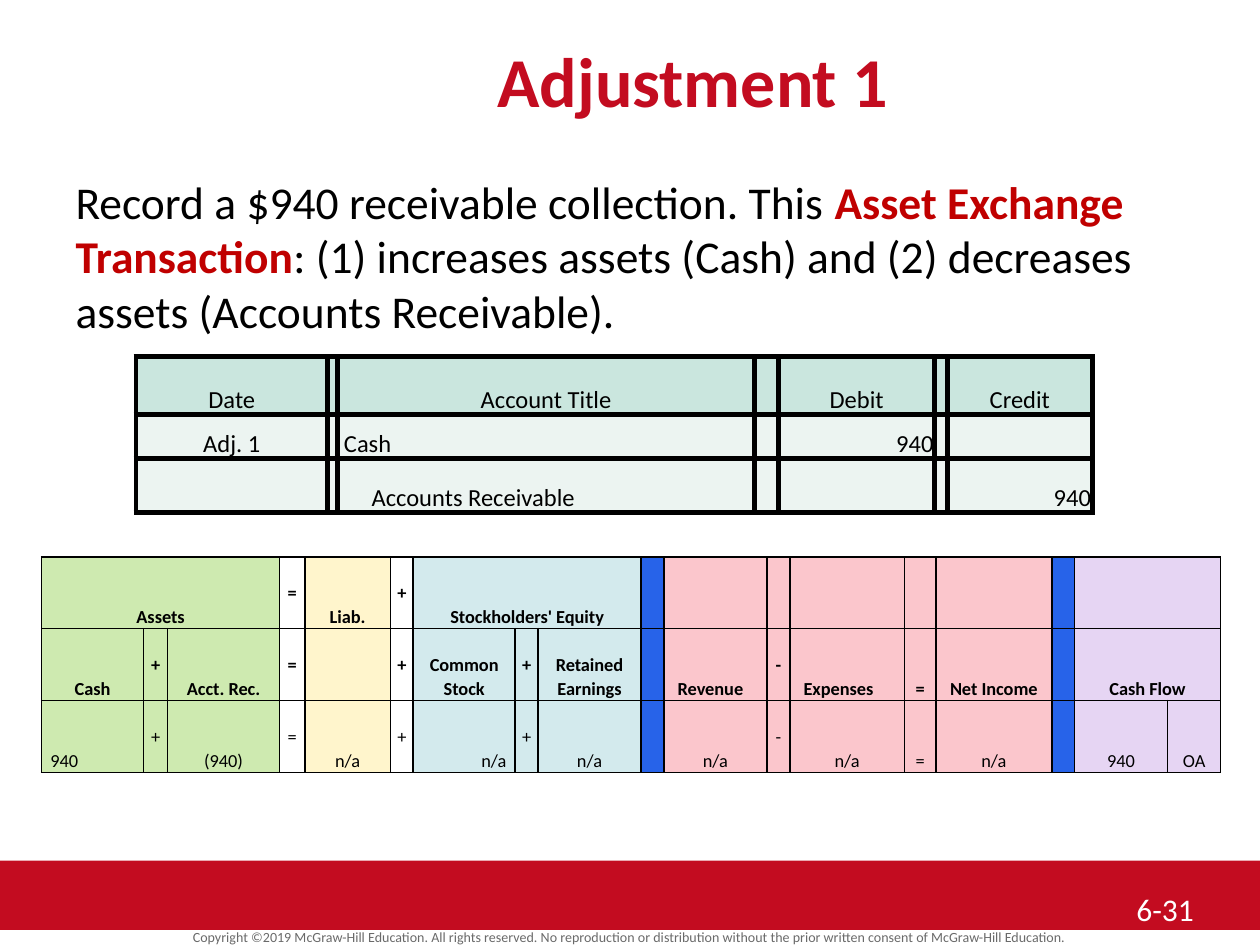
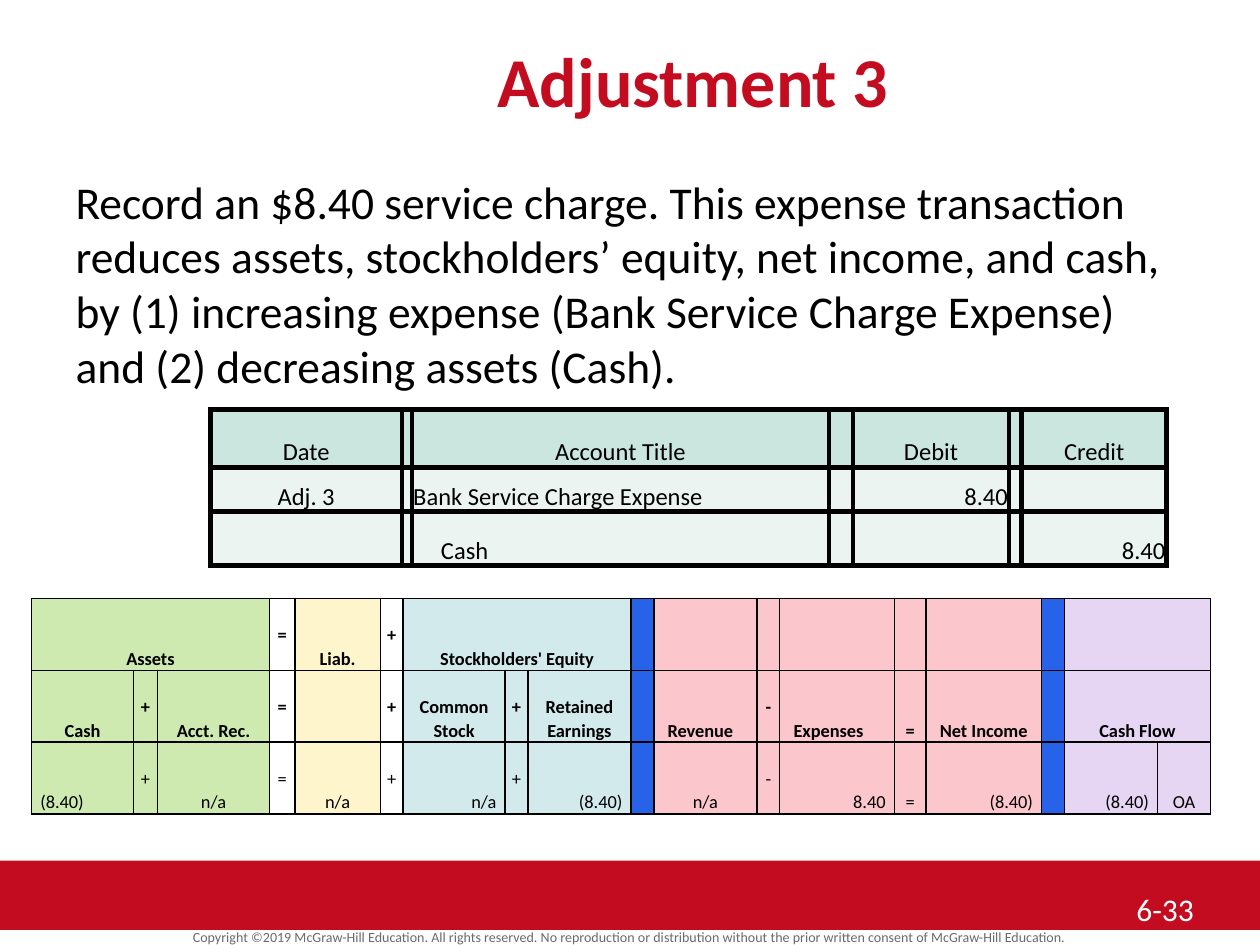
from lxml import etree
from pptx import Presentation
from pptx.dml.color import RGBColor
from pptx.enum import shapes, text
from pptx.oxml import ns
from pptx.util import Inches, Pt

FONT = "Calibri"
COLORS = {
    "crimson": "C30C20", "emphasis": "C00000", "black": "000000",
    "white": "FFFFFF", "gray": "6A6A6A", "mint": "CAE6DE", "pale": "ECF4F1",
    "assets": "CEEAB0", "liabilities": "FFF5CC", "equity": "D3EAED",
    "divider": "2763E9", "income": "FBC6CC", "cash_flow": "E6D5F3",
}
COPYRIGHT = ("Copyright ©2019 McGraw-Hill Education. All rights reserved. "
             "No reproduction or distribution without the prior written "
             "consent of McGraw-Hill Education.")
LEFT, CENTER, RIGHT = (text.PP_ALIGN.LEFT, text.PP_ALIGN.CENTER,
                       text.PP_ALIGN.RIGHT)

JOURNAL_WIDTHS = [1.52, 0.08, 3.31, 0.19, 1.24, 0.1, 1.15]
JOURNAL_HEIGHTS = [0.46, 0.35, 0.43]

EQUATION_WIDTHS = [0.81, 0.19, 0.89, 0.2, 0.68, 0.18, 0.81, 0.18, 0.82,
                   0.18, 0.82, 0.18, 0.91, 0.25, 0.92, 0.18, 0.74, 0.42]
EQUATION_HEIGHTS = [0.57] * 3
EQUATION_FILLS = (["assets"] * 3 + [None, "liabilities", None]
                  + ["equity"] * 3 + ["divider"] + ["income"] * 5
                  + ["divider"] + ["cash_flow"] * 2)
EQUATION_GROUPS = ["Assets", "", "", "=", "Liab.", "+",
                   "Stockholders' Equity"] + [""] * 11
EQUATION_ACCOUNTS = ["Cash", "+", "Acct. Rec.", "=", "", "+", "Common Stock",
                     "+", "Retained Earnings", "", "Revenue", "-", "Expenses",
                     "=", "Net Income", "", "Cash Flow", ""]
EQUATION_MERGES = [(0, 0, 2), (0, 6, 8), (0, 16, 17), (1, 16, 17)]
OPERATOR_WIDTH = 0.2
LINE_HEIGHT = 0.19


def rgb(name):
    return RGBColor.from_string(COLORS[name])


def set_borders(cell, width):
    properties = cell._tc.get_or_add_tcPr()
    for position, side in enumerate(("lnL", "lnR", "lnT", "lnB")):
        line = etree.Element(ns.qn(f"a:{side}"), w=str(Pt(width)))
        fill = etree.SubElement(line, ns.qn("a:solidFill"))
        etree.SubElement(fill, ns.qn("a:srgbClr"), val=COLORS["black"])
        properties.insert(position, line)


class Deck:
    """Holds the shared style and the slide being built."""

    def __init__(self):
        self.prs = Presentation()
        self.prs.slide_width = Inches(10)
        self.prs.slide_height = Inches(7.5)
        self.slide = None

    def style(self, paragraph, size, color="black", bold=False, align=LEFT):
        paragraph.alignment = align
        for run in paragraph.runs:
            run.font.name = FONT
            run.font.size = Pt(size)
            run.font.bold = bold
            run.font.color.rgb = rgb(color)

    def place(self, shape, left, top, width, height):
        shape.left, shape.top = Inches(left), Inches(top)
        shape.width, shape.height = Inches(width), Inches(height)
        frame = shape.text_frame
        frame.auto_size = text.MSO_AUTO_SIZE.NONE
        frame.word_wrap = True
        frame.vertical_anchor = text.MSO_ANCHOR.TOP
        return frame

    def start_slide(self, title, number):
        self.slide = self.prs.slides.add_slide(self.prs.slide_layouts[1])
        self.band()
        self.label(COPYRIGHT, (0, 7.34, 10, 0.19), 8, "gray", CENTER, inset=0)
        frame = self.place(self.slide.shapes.title, 1, 0.25, 9, 0.67)
        frame.text = title
        self.style(frame.paragraphs[0], 40, "crimson", True, CENTER)
        self.label(number, (8.92, 7, 0.92, 0.42), 18, "white")

    def band(self):
        band = self.slide.shapes.add_shape(
            shapes.MSO_SHAPE.RECTANGLE,
            Inches(0), Inches(6.83), Inches(10), Inches(0.55))
        band.shadow.inherit = False
        band.fill.solid()
        band.fill.fore_color.rgb = rgb("crimson")
        band.line.fill.background()

    def label(self, wording, box, size, color, align=LEFT, inset=0.05):
        shape = self.slide.shapes.add_textbox(*map(Inches, box))
        frame = self.place(shape, *box)
        frame.margin_top = frame.margin_bottom = Inches(inset)
        frame.vertical_anchor = text.MSO_ANCHOR.MIDDLE
        frame.text = wording
        self.style(frame.paragraphs[0], size, color, align=align)

    def body(self, *parts):
        """Write one unbulleted paragraph; every second part is emphasised."""
        frame = self.place(self.slide.placeholders[1], 0.5, 1.33, 9, 5.17)
        paragraph = frame.paragraphs[0]
        properties = paragraph._p.get_or_add_pPr()
        properties.set("marL", "0")
        properties.set("indent", "0")
        etree.SubElement(properties, ns.qn("a:buNone"))
        paragraph.space_before = Pt(0)
        for part in parts:
            paragraph.add_run().text = part
        self.style(paragraph, 26)
        for run in paragraph.runs[1::2]:
            run.font.bold = True
            run.font.color.rgb = rgb("emphasis")

    def grid(self, left, top, widths, heights):
        table = self.slide.shapes.add_table(
            len(heights), len(widths), Inches(left), Inches(top),
            Inches(sum(widths)), Inches(sum(heights))).table
        table.first_row = table.horz_banding = False
        for column, width in zip(table.columns, widths):
            column.width = Inches(width)
        for row, height in zip(table.rows, heights):
            row.height = Inches(height)
        return table

    def cell(self, cell, wording, size, fill, border, align=CENTER,
             bold=False, left=0.01, right=0.01, bottom=0):
        cell.margin_left, cell.margin_right = Inches(left), Inches(right)
        cell.margin_top, cell.margin_bottom = Inches(0.01), Inches(bottom)
        cell.vertical_anchor = text.MSO_ANCHOR.BOTTOM
        if fill:
            cell.fill.solid()
            cell.fill.fore_color.rgb = rgb(fill)
        else:
            cell.fill.background()
        set_borders(cell, border)
        if wording:
            cell.text_frame.text = wording
            self.style(cell.text_frame.paragraphs[0], size, bold=bold,
                       align=align)

    def journal(self, left, top, date, debited, credited, amount,
                debit_indent, credit_indent):
        entries = [
            ["Date", "", "Account Title", "", "Debit", "", "Credit"],
            [date, "", debited, "", amount, "", ""],
            ["", "", credited, "", "", "", amount],
        ]
        indents = [0.01, debit_indent, credit_indent]
        table = self.grid(left, top, JOURNAL_WIDTHS, JOURNAL_HEIGHTS)
        for r, entry in enumerate(entries):
            for c, wording in enumerate(entry):
                align = {2: LEFT, 4: RIGHT, 6: RIGHT}.get(c, CENTER)
                self.cell(table.cell(r, c), wording, 14,
                          "pale" if r else "mint", 3,
                          align if r else CENTER,
                          left=indents[r] if c == 2 else 0.01)

    def equation(self, left, top, amounts, right_aligned):
        """Draw the statements model; right_aligned lists amount columns."""
        aligns = [{}, {10: LEFT, 12: LEFT},
                  {0: LEFT, **dict.fromkeys(right_aligned, RIGHT)}]
        table = self.grid(left, top, EQUATION_WIDTHS, EQUATION_HEIGHTS)
        rows = [EQUATION_GROUPS, EQUATION_ACCOUNTS, amounts]
        for r, row in enumerate(rows):
            for c, wording in enumerate(row):
                narrow = EQUATION_WIDTHS[c] <= OPERATOR_WIDTH
                side = 0 if narrow else 0.07
                cell = table.cell(r, c)
                self.cell(cell, wording, 10.5, EQUATION_FILLS[c], 1,
                          aligns[r].get(c, CENTER), bold=r < 2,
                          left=0.11 if r == 1 and c in aligns[1] else side,
                          right=side, bottom=LINE_HEIGHT if narrow else 0)
                cell.text_frame.paragraphs[0].line_spacing = 1.07
        for r, first, last in EQUATION_MERGES:
            table.cell(r, first).merge(table.cell(r, last))


def main():
    deck = Deck()

    deck.start_slide("Adjustment 1", "6-31")
    deck.body("Record a $940 receivable collection. This ",
              "Asset Exchange Transaction",
              ": (1) increases assets (Cash) and (2) decreases assets "
              "(Accounts Receivable).")
    deck.equation(0.33, 4.42,
                  ["940", "+", "(940)", "=", "n/a", "+", "n/a", "+", "n/a",
                   "", "n/a", "-", "n/a", "=", "n/a", "", "940", "OA"],
                  right_aligned=[6])
    deck.journal(1.08, 2.83, "Adj. 1", "Cash", "Accounts Receivable", "940",
                 debit_indent=0.05, credit_indent=0.27)

    deck.start_slide("Adjustment 3", "6-33")
    deck.body("Record an $8.40 service charge. This expense transaction "
              "reduces assets, stockholders’ equity, net income, and cash, "
              "by (1) increasing expense (Bank Service Charge Expense) and "
              "(2) decreasing assets (Cash).")
    deck.equation(0.25, 4.75,
                  ["(8.40)", "+", "n/a", "=", "n/a", "+", "n/a", "+",
                   "(8.40)", "", "n/a", "-", "8.40", "=", "(8.40)", "",
                   "(8.40)", "OA"],
                  right_aligned=[6, 8, 12, 14, 16])
    deck.journal(1.67, 3.25, "Adj. 3", "Bank Service Charge Expense", "Cash",
                 "8.40", debit_indent=0.01, credit_indent=0.23)

    deck.prs.save("out.pptx")


if __name__ == "__main__":
    main()
